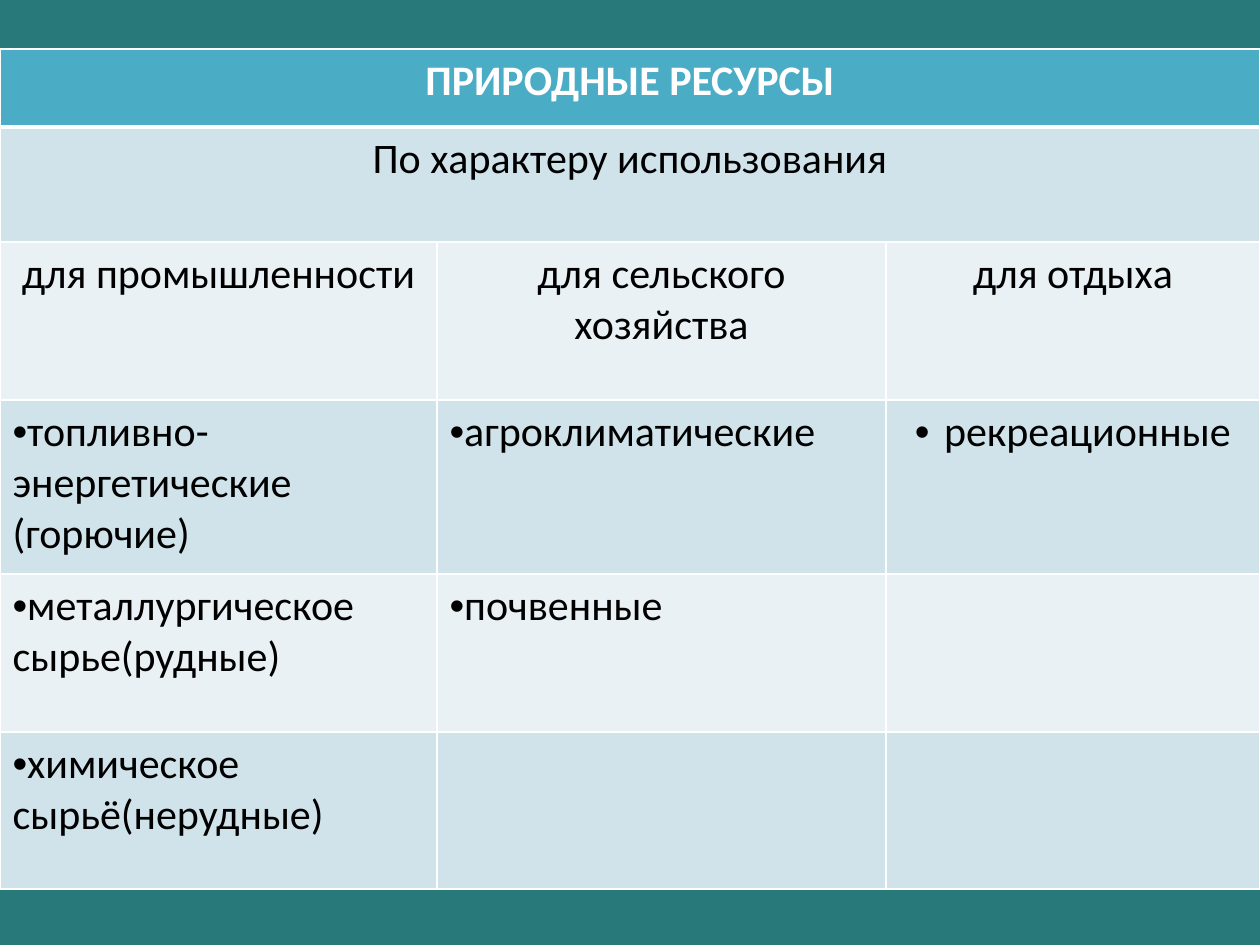
import pptx
import pptx.util
import pptx.dml.color
import pptx.enum.text
import pptx.oxml
import pptx.oxml.ns
import lxml.etree

RGBColor = pptx.dml.color.RGBColor
TEAL = RGBColor(0x28, 0x7A, 0x7A)
HEADER = RGBColor(0x4B, 0xAC, 0xC6)
BAND_DARK = RGBColor(0xD0, 0xE3, 0xEA)
BAND_LIGHT = RGBColor(0xE9, 0xF1, 0xF5)
WHITE = RGBColor(0xFF, 0xFF, 0xFF)
BLACK = RGBColor(0, 0, 0)
CENTER = pptx.enum.text.PP_ALIGN.CENTER
LEFT = pptx.enum.text.PP_ALIGN.LEFT

COLUMN_WIDTHS = [437, 449, 374]
ROW_HEIGHTS = [78, 115, 158, 174, 158, 157]
HANGING_INDENT = 29
ROWS = [
    ["ПРИРОДНЫЕ РЕСУРСЫ"],
    ["По характеру использования"],
    ["для промышленности", "для сельского хозяйства", "для отдыха"],
    ["топливно-энергетические\n(горючие)", "агроклиматические", "рекреационные"],
    ["металлургическое сырье(рудные)", "почвенные", ""],
    ["химическое сырьё(нерудные)", "", ""],
]
MERGED_ROWS = 2
FIRST_BULLET_ROW = 3


def px(length):
    return pptx.util.Emu(length * 914400 // 126)


def add_bullet(para, indent):
    properties = para._p.get_or_add_pPr()
    properties.set("marL", str(px(indent)))
    properties.set("indent", str(-px(indent)))
    for tag, name, value in [("a:buFont", "typeface", "Arial"), ("a:buChar", "char", "•")]:
        element = lxml.etree.SubElement(properties, pptx.oxml.ns.qn(tag))
        element.set(name, value)


def set_borders(cell, bottom_width):
    properties = cell._tc.get_or_add_tcPr()
    widths = {"lnL": 1, "lnR": 1, "lnT": 1, "lnB": bottom_width}
    for position, (tag, width) in enumerate(widths.items()):
        line = pptx.oxml.parse_xml(
            f'<a:{tag} {pptx.oxml.ns.nsdecls("a")} w="{pptx.util.Pt(width)}">'
            f'<a:solidFill><a:srgbClr val="{WHITE}"/></a:solidFill></a:{tag}>')
        properties.insert(position, line)


def fill_cell(cell, text, row, column):
    is_header = row == 0
    cell.fill.solid()
    cell.fill.fore_color.rgb = HEADER if is_header else BAND_DARK if row % 2 else BAND_LIGHT
    set_borders(cell, 3 if is_header else 1)
    cell.text_frame.text = text
    is_bulleted = row >= FIRST_BULLET_ROW
    for index, para in enumerate(cell.text_frame.paragraphs):
        is_centered = not is_bulleted or column == 2
        para.alignment = CENTER if is_centered else LEFT
        para.font.size = pptx.util.Pt(24)
        if is_bulleted and text and index == 0:
            add_bullet(para, HANGING_INDENT if is_centered else 0)
        for span in para.runs:
            span.font.name = "Calibri"
            span.font.size = pptx.util.Pt(24)
            span.font.bold = is_header
            span.font.color.rgb = WHITE if is_header else BLACK


def add_resource_table(page, left, top, width, height):
    box = page.shapes.add_table(len(ROWS), len(COLUMN_WIDTHS),
                                px(left), px(top), px(width), px(height))
    table = box.table
    for column, size in zip(table.columns, COLUMN_WIDTHS):
        column.width = px(size)
    for row, size in zip(table.rows, ROW_HEIGHTS):
        row.height = px(size)
    for row in range(MERGED_ROWS):
        table.cell(row, 0).merge(table.cell(row, len(COLUMN_WIDTHS) - 1))
    for row, texts in enumerate(ROWS):
        for column, text in enumerate(texts):
            fill_cell(table.cell(row, column), text, row, column)


def main():
    deck = pptx.Presentation()
    deck.slide_width = px(1260)
    deck.slide_height = px(945)
    page = deck.slides.add_slide(deck.slide_layouts[6])
    page.background.fill.solid()
    page.background.fill.fore_color.rgb = TEAL
    add_resource_table(page, 0, 49, sum(COLUMN_WIDTHS), sum(ROW_HEIGHTS))
    deck.save("out.pptx")


if __name__ == "__main__":
    main()
